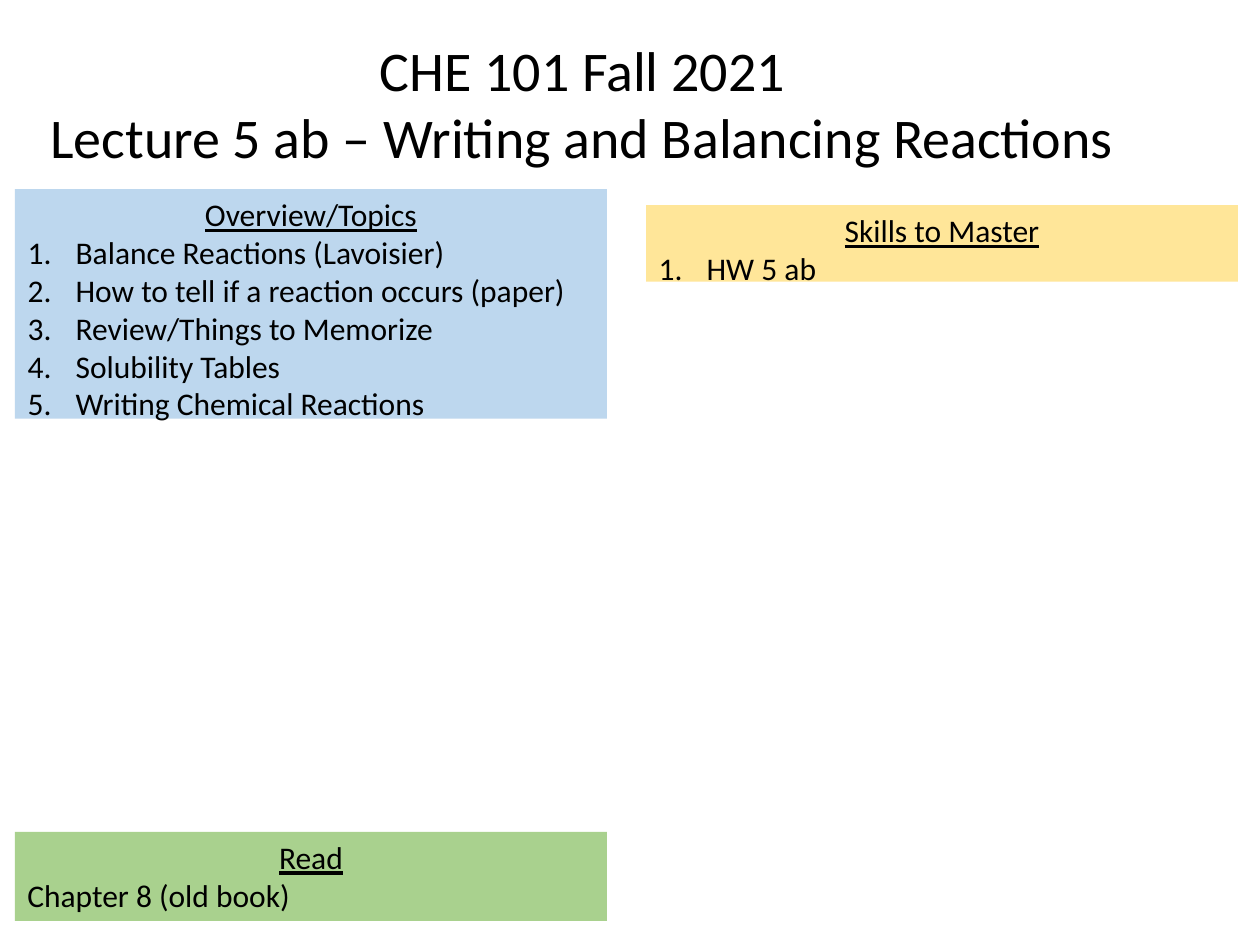
from dataclasses import dataclass

from pptx import Presentation
from pptx.dml.color import RGBColor
from pptx.enum.text import MSO_ANCHOR, MSO_AUTO_SIZE, PP_ALIGN
from pptx.oxml.xmlchemy import OxmlElement
from pptx.util import Inches, Pt

PX_PER_INCH = 126
TWO_CONTENT_LAYOUT = 3


@dataclass(frozen=True)
class Theme:
    font: str = "Calibri"
    text: str = "000000"
    overview: str = "BDD7EE"
    skills: str = "FFE699"
    reading: str = "A9D18E"
    title_size: int = 32
    body_size: int = 18


THEME = Theme()


def px(length):
    return round(length * Inches(1) / PX_PER_INCH)


def place(shape, left, top, width, height):
    shape.left, shape.top = px(left), px(top)
    shape.width, shape.height = px(width), px(height)


def format_paragraph(para, size, align, underline=False):
    para.alignment = align
    para.line_spacing = 1.0
    para.space_before = para.space_after = Pt(0)
    for span in para.runs:
        span.font.name = THEME.font
        span.font.size = Pt(size)
        span.font.color.rgb = RGBColor.from_string(THEME.text)
        span.font.underline = underline


def set_marker(para, numbered):
    """Number the paragraph with a hanging indent, or clear its bullet."""
    properties = para._p.get_or_add_pPr()
    indent = px(48) if numbered else 0
    properties.set("marL", str(indent))
    properties.set("indent", str(-indent))
    marker = OxmlElement("a:buAutoNum" if numbered else "a:buNone")
    if numbered:
        font = OxmlElement("a:buFont")
        font.set("typeface", "+mj-lt")
        properties.append(font)
        marker.set("type", "arabicPeriod")
    properties.append(marker)


def fill_title(title, lines):
    place(title, 32, 29, 1101, 149)
    frame = title.text_frame
    frame.text = "\n".join(lines)
    frame.word_wrap = False
    frame.auto_size = MSO_AUTO_SIZE.SHAPE_TO_FIT_TEXT
    frame.vertical_anchor = MSO_ANCHOR.TOP
    for para in frame.paragraphs:
        format_paragraph(para, THEME.title_size, PP_ALIGN.CENTER)


def fill_panel(box, bounds, color, heading, items, numbered=True):
    place(box, *bounds)
    box.fill.solid()
    box.fill.fore_color.rgb = RGBColor.from_string(color)
    frame = box.text_frame
    frame.text = "\n".join([heading, *items])
    frame.word_wrap = True
    frame.auto_size = MSO_AUTO_SIZE.SHAPE_TO_FIT_TEXT
    frame.vertical_anchor = MSO_ANCHOR.TOP
    head, *entries = frame.paragraphs
    format_paragraph(head, THEME.body_size, PP_ALIGN.CENTER, underline=True)
    set_marker(head, False)
    for para in entries:
        format_paragraph(para, THEME.body_size, PP_ALIGN.LEFT)
        set_marker(para, numbered)


def main():
    deck = Presentation()
    deck.slide_width, deck.slide_height = Inches(10), Inches(7.5)
    page = deck.slides.add_slide(deck.slide_layouts[TWO_CONTENT_LAYOUT])
    title, overview, skills = page.placeholders

    # Course and lecture title
    fill_title(title, ["CHE 101 Fall 2021",
                       "Lecture 5 ab – Writing and Balancing Reactions"])

    # Numbered lists
    fill_panel(overview, (15, 189, 592, 242), THEME.overview, "Overview/Topics", [
        "Balance Reactions (Lavoisier)",
        "How to tell if a reaction occurs (paper)",
        "Review/Things to Memorize",
        "Solubility Tables",
        "Writing Chemical Reactions",
    ])
    fill_panel(skills, (646, 205, 592, 89), THEME.skills, "Skills to Master",
               ["HW 5 ab"])

    # Reading assignment
    reading = page.shapes.add_textbox(0, 0, 0, 0)
    fill_panel(reading, (15, 832, 592, 89), THEME.reading, "Read",
               ["Chapter 8 (old book)"], numbered=False)

    deck.save("out.pptx")


if __name__ == "__main__":
    main()
